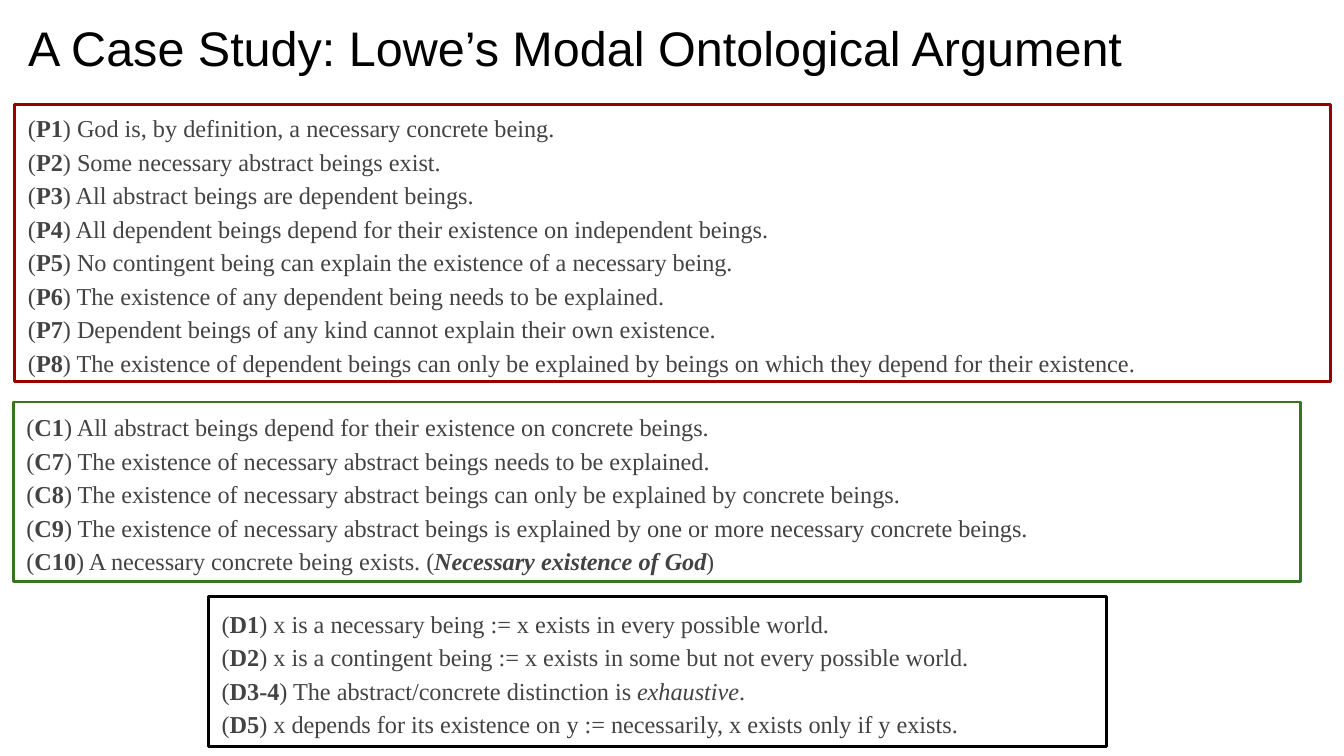
from pptx import Presentation
from pptx import util as u
from pptx.dml.color import RGBColor
from pptx.enum import shapes, text

BLACK = RGBColor(0x00, 0x00, 0x00)
GREY = RGBColor(0x43, 0x43, 0x43)
RED = RGBColor(0x98, 0x00, 0x00)
GREEN = RGBColor(0x38, 0x76, 0x1D)

HEADING = "A Case Study: Lowe’s Modal Ontological Argument"
HEADING_BOX = (0.28, 0, 24.36, 1.78)

PREMISES = [
    ("P1", "God is, by definition, a necessary concrete being."),
    ("P2", "Some necessary abstract beings exist."),
    ("P3", "All abstract beings are dependent beings."),
    ("P4", "All dependent beings depend for their existence on independent beings."),
    ("P5", "No contingent being can explain the existence of a necessary being."),
    ("P6", "The existence of any dependent being needs to be explained."),
    ("P7", "Dependent beings of any kind cannot explain their own existence."),
    ("P8", "The existence of dependent beings can only be explained by beings "
           "on which they depend for their existence."),
]
DEFINITIONS = [
    ("D1", "x is a necessary being := x exists in every possible world."),
    ("D2", "x is a contingent being := x exists in some but not every possible world."),
    ("D3-4", "The abstract/concrete distinction is ", ("exhaustive", {"italic": True}), "."),
    ("D5", "x depends for its existence on y := necessarily, x exists only if y exists."),
]
CONCLUSIONS = [
    ("C1", "All abstract beings depend for their existence on concrete beings."),
    ("C7", "The existence of necessary abstract beings needs to be explained."),
    ("C8", "The existence of necessary abstract beings can only be explained "
           "by concrete beings."),
    ("C9", "The existence of necessary abstract beings is explained by one or more "
           "necessary concrete beings."),
    ("C10", "A necessary concrete being exists. (",
     ("Necessary existence of God", {"bold": True, "italic": True}), ")"),
]
PANELS = [
    (PREMISES, RED, (0.28, 1.98, 24.87, 5.23)),
    (DEFINITIONS, BLACK, (3.94, 11.28, 16.97, 2.84)),
    (CONCLUSIONS, GREEN, (0.25, 7.6, 24.33, 3.4)),
]


def write(paragraph, words, font="Times New Roman", size=13, color=GREY,
          bold=False, italic=False, spacing=1.15):
    paragraph.alignment = text.PP_ALIGN.LEFT
    paragraph.line_spacing = spacing
    run = paragraph.add_run()
    run.text = words
    run.font.name = font
    run.font.size = u.Pt(size)
    run.font.color.rgb = color
    run.font.bold = bold
    run.font.italic = italic


def set_frame(frame):
    frame.word_wrap = True
    frame.auto_size = text.MSO_AUTO_SIZE.NONE
    frame.vertical_anchor = text.MSO_ANCHOR.MIDDLE
    frame.margin_left = frame.margin_right = u.Cm(0.25)
    frame.margin_top = frame.margin_bottom = u.Cm(0.25)


def add_panel(slide, statements, outline, box):
    panel = slide.shapes.add_shape(shapes.MSO_SHAPE.RECTANGLE, *map(u.Cm, box))
    panel.shadow.inherit = False
    panel.fill.background()
    panel.line.color.rgb = outline
    panel.line.width = u.Pt(1.5)
    frame = panel.text_frame
    set_frame(frame)
    for index, (label, opening, *rest) in enumerate(statements):
        paragraph = frame.add_paragraph() if index else frame.paragraphs[0]
        write(paragraph, "(")
        write(paragraph, label, bold=True)
        write(paragraph, ") " + opening)
        for part in rest:
            words, style = (part, {}) if isinstance(part, str) else part
            write(paragraph, words, **style)


def main():
    deck = Presentation()
    deck.slide_width, deck.slide_height = u.Cm(25.4), u.Cm(14.29)
    slide = deck.slides.add_slide(deck.slide_layouts.get_by_name("Title Only"))
    title = slide.shapes.title
    title.left, title.top, title.width, title.height = map(u.Cm, HEADING_BOX)
    set_frame(title.text_frame)
    write(title.text_frame.paragraphs[0], HEADING, font="Arial", size=26,
          color=BLACK, spacing=1.0)
    for statements, outline, box in PANELS:
        add_panel(slide, statements, outline, box)
    deck.save("out.pptx")


if __name__ == "__main__":
    main()
